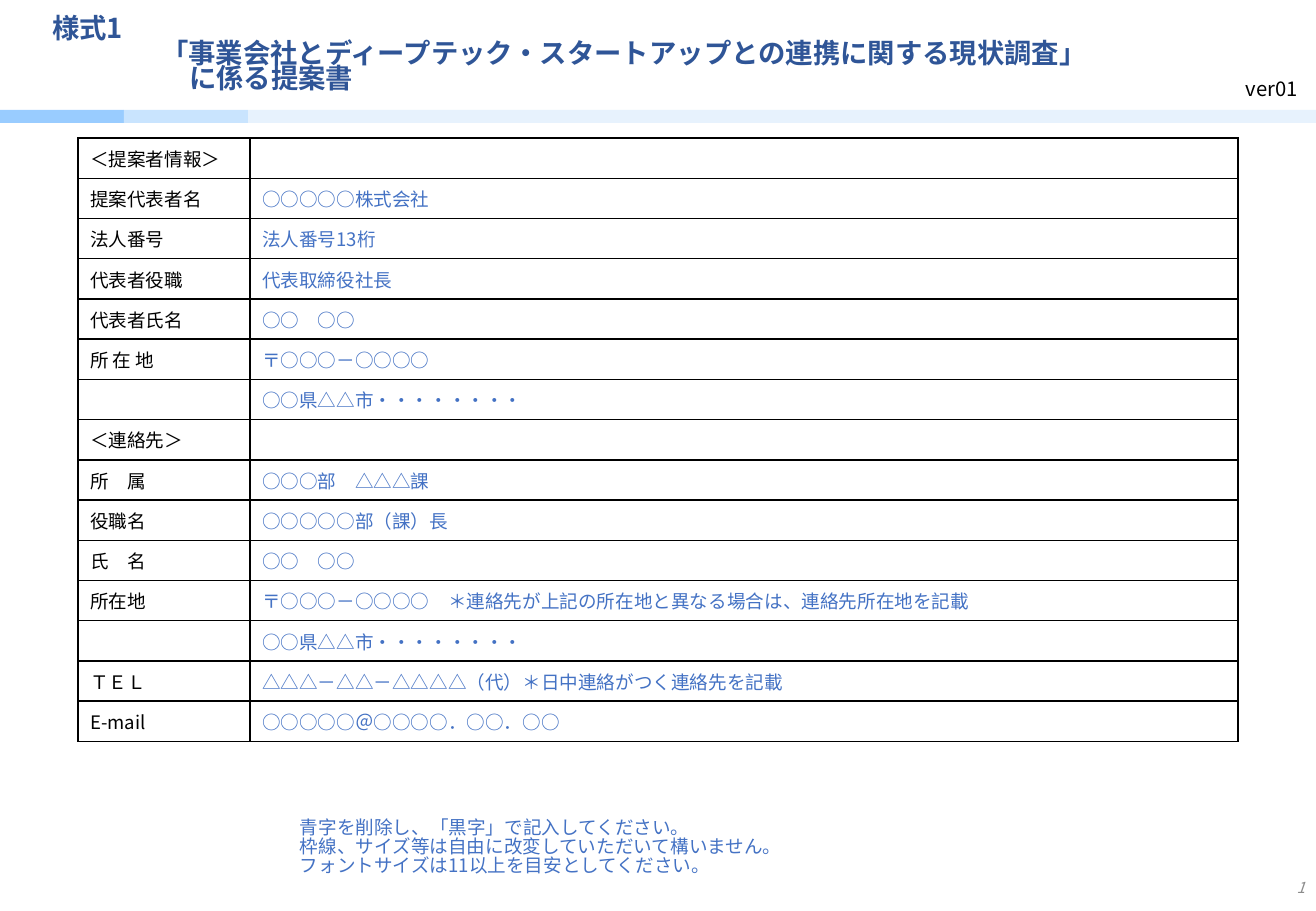
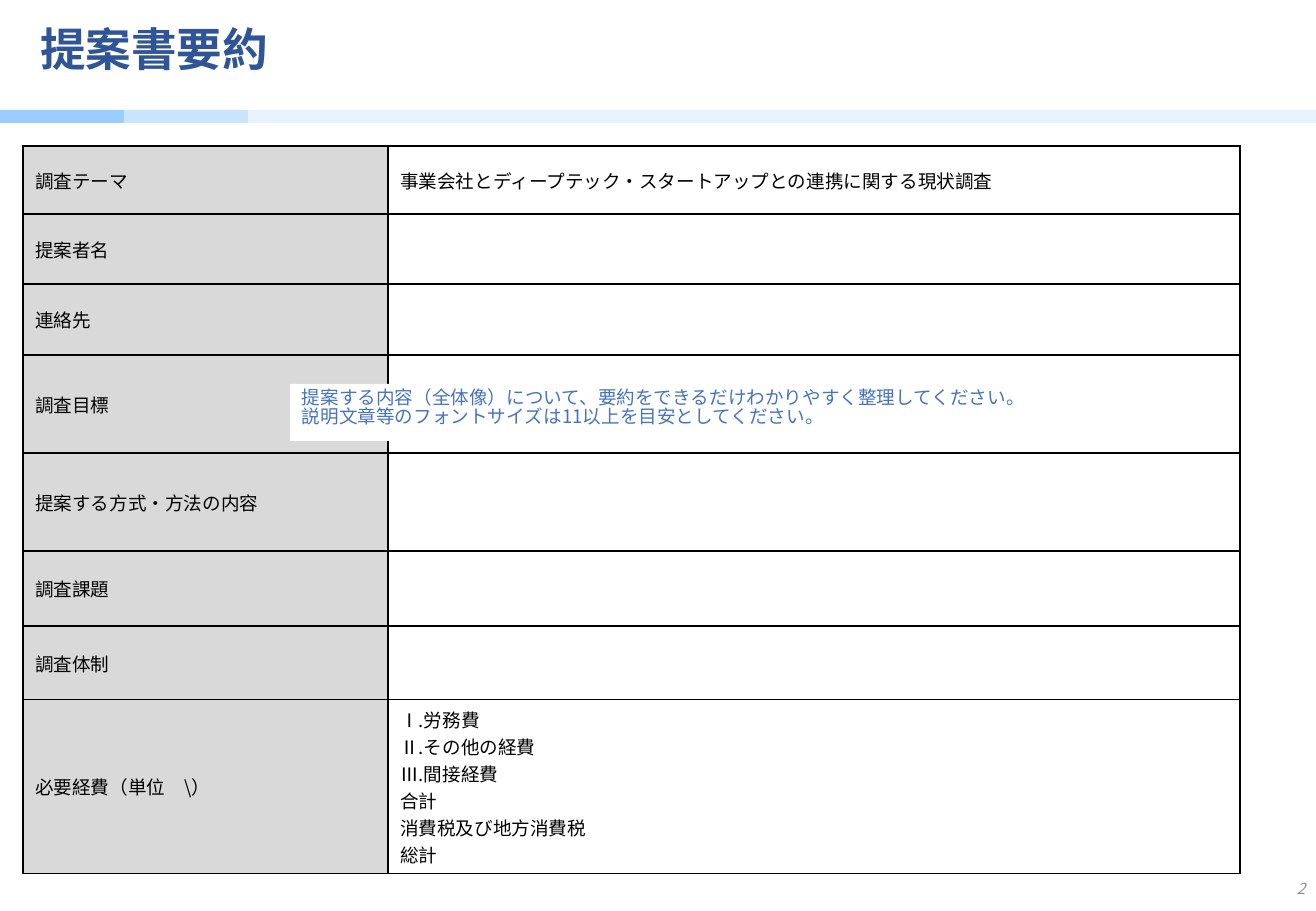
import pptx
import pptx.dml.color
import pptx.enum.shapes
import pptx.enum.text
import pptx.oxml
import pptx.oxml.ns
import pptx.util
from lxml import etree

# Shared look
FONT = "Noto Sans CJK JP"
NAVY, BLUE, BLACK, WHITE = "2F5597", "4472C4", "000000", "FFFFFF"
GRAY, LABEL_FILL = "8C8C8C", "D9D9D9"
SLIDE_W, SLIDE_H = 1316, 911
BAND_TOP, BAND_H = 110, 13
BANDS = [("99CCFF", 124), ("C9E4FE", 124), ("E7F2FD", SLIDE_W - 248)]
NOTE_SPACING, TITLE_SPACING = 0.84, 0.76
EMU_PER_PX = 914400 / 121.5

# Slide 1 content: title lines with their indents, form rows, notes
FORM_TITLE = [
    ("様式1", 0),
    ("「事業会社とディープテック・スタートアップとの連携に関する現状調査」", 109),
    ("に係る提案書", 137),
]
FORM_ROWS = [
    ("＜提案者情報＞", ""),
    ("提案代表者名", "○○○○○株式会社"),
    ("法人番号", "法人番号13桁"),
    ("代表者役職", "代表取締役社長"),
    ("代表者氏名", "○○　○○"),
    ("所 在 地", "〒○○○－○○○○"),
    ("", "○○県△△市・・・・・・・・"),
    ("＜連絡先＞", ""),
    ("所　属", "○○○部　△△△課"),
    ("役職名", "○○○○○部（課）長"),
    ("氏　名", "○○　○○"),
    ("所在地", "〒○○○－○○○○　＊連絡先が上記の所在地と異なる場合は、連絡先所在地を記載"),
    ("", "○○県△△市・・・・・・・・"),
    ("ＴＥＬ", "△△△－△△－△△△△（代）＊日中連絡がつく連絡先を記載"),
    ("E-mail", "○○○○○＠○○○○．○○．○○"),
]
FORM_H = 604
FORM_NOTES = [
    "青字を削除し、「黒字」で記入してください。",
    "枠線、サイズ等は自由に改変していただいて構いません。",
    "フォントサイズは11以上を目安としてください。",
]

# Slide 2 content
SUMMARY_TITLE = [("提案書要約", 0)]
SUMMARY_ROWS = [
    ("調査テーマ", "事業会社とディープテック・スタートアップとの連携に関する現状調査"),
    ("提案者名", ""),
    ("連絡先", ""),
    ("調査目標", ""),
    ("提案する方式・方法の内容", ""),
    ("調査課題", ""),
    ("調査体制", ""),
    (r"必要経費（単位　\）", ["Ⅰ.労務費", "Ⅱ.その他の経費", "Ⅲ.間接経費",
                       "合計", "消費税及び地方消費税", "総計"]),
]
SUMMARY_HEIGHTS = [68, 70, 71, 98, 98, 75, 74, 174]
SUMMARY_NOTES = [
    "提案する内容（全体像）について、要約をできるだけわかりやすく整理してください。",
    "説明文章等のフォントサイズは11以上を目安としてください。",
]


def px(n):
    return pptx.util.Emu(round(n * EMU_PER_PX))


def rgb(hex_color):
    return pptx.dml.color.RGBColor.from_string(hex_color)


def box(*lengths):
    return [px(n) for n in lengths]


def style(font, size, color, bold=False, italic=False):
    font.name, font.size = FONT, pptx.util.Pt(size)
    font.bold, font.italic = bold, italic
    font.color.rgb = rgb(color)
    ea = etree.SubElement(font._element, pptx.oxml.ns.qn("a:ea"))
    ea.set("typeface", FONT)


def write(tf, text, size=11, color=BLACK, bold=False, italic=False,
          align="LEFT", anchor="TOP", spacing=None, wrap=True):
    """Write a string, or a list of lines or (line, indent) pairs."""
    lines = [text] if isinstance(text, str) else text
    tf.word_wrap = wrap
    tf.vertical_anchor = getattr(pptx.enum.text.MSO_ANCHOR, anchor)
    for i, line in enumerate(lines):
        line, indent = (line, 0) if isinstance(line, str) else line
        p = tf.paragraphs[0] if i == 0 else tf.add_paragraph()
        p.alignment = getattr(pptx.enum.text.PP_ALIGN, align)
        if spacing:
            p.line_spacing = spacing
        if indent:
            p._p.get_or_add_pPr().set("marL", str(px(indent)))
        if line:
            r = p.add_run()
            r.text = line
            style(r.font, size, color, bold, italic)
        else:
            p._p.get_or_add_endParaRPr().set("sz", str(size * 100))


def add_rect(slide, bounds, fill):
    sp = slide.shapes.add_shape(pptx.enum.shapes.MSO_SHAPE.RECTANGLE, *box(*bounds))
    sp.shadow.inherit = False
    sp.fill.solid()
    sp.fill.fore_color.rgb = rgb(fill)
    sp.line.fill.background()
    return sp


def add_text(slide, bounds, text, **fmt):
    sp = slide.shapes.add_textbox(*box(*bounds))
    write(sp.text_frame, text, **fmt)
    return sp


def add_bands(slide, layout):
    """Draw the header bands and move them to the layout."""
    left = 0
    for i, (color, width) in enumerate(BANDS):
        el = add_rect(slide, (left, BAND_TOP, width, BAND_H), color)._element
        el.nvSpPr.cNvPr.set("id", str(101 + i))
        layout.shapes._spTree.insert(2 + i, el)
        left += width


def set_title(slide, bounds, lines, size):
    sp = slide.shapes.title
    sp.left, sp.top, sp.width, sp.height = box(*bounds)
    sp.text_frame.auto_size = pptx.enum.text.MSO_AUTO_SIZE.NONE
    write(sp.text_frame, lines, size=size, color=NAVY, bold=True,
          anchor="MIDDLE", spacing=TITLE_SPACING)


def add_page_number(slide, bounds, number):
    sp = add_text(slide, bounds, str(number), size=9, color=GRAY, italic=True,
                  align="RIGHT", anchor="MIDDLE")
    # Turn the run into a slide number field
    r = sp.text_frame.paragraphs[0].runs[0]._r
    field = pptx.oxml.parse_xml(
        f'<a:fld {pptx.oxml.ns.nsdecls("a")} type="slidenum" '
        'id="{B6F15528-21DE-4FAA-801E-634DDDAF4B2B}"/>')
    r.addprevious(field)
    field.extend(list(r))
    r.getparent().remove(r)


def set_borders(cell):
    tc_pr = cell._tc.get_or_add_tcPr()
    for side in "LRTB":
        tc_pr.append(pptx.oxml.parse_xml(
            f'<a:ln{side} {pptx.oxml.ns.nsdecls("a")} w="12700"><a:solidFill>'
            f'<a:srgbClr val="{BLACK}"/></a:solidFill></a:ln{side}>'))


def add_grid(slide, left, top, widths, heights, rows, colors, label_fill=None):
    bounds = box(left, top, sum(widths), sum(heights))
    table = slide.shapes.add_table(len(rows), len(widths), *bounds).table
    table.first_row = table.horz_banding = False
    for column, width in zip(table.columns, widths):
        column.width = px(width)
    for i, (row, height) in enumerate(zip(rows, heights)):
        table.rows[i].height = px(height)
        for j, text in enumerate(row):
            cell = table.cell(i, j)
            set_borders(cell)
            if label_fill and j == 0:
                cell.fill.solid()
                cell.fill.fore_color.rgb = rgb(label_fill)
            else:
                cell.fill.background()
            write(cell.text_frame, text, color=colors[j], wrap=None)
            cell.vertical_anchor = pptx.enum.text.MSO_ANCHOR.MIDDLE


def build_form(slide):
    set_title(slide, (40, 10, 1119, 92), FORM_TITLE, 16.2)
    add_page_number(slide, (1197, 863, 120, 48), 1)
    heights = [FORM_H / len(FORM_ROWS)] * len(FORM_ROWS)
    add_grid(slide, 78, 138, (172, 988), heights, FORM_ROWS, (BLACK, BLUE))
    add_text(slide, (288, 814, 659, 80), FORM_NOTES, color=BLUE, spacing=NOTE_SPACING)
    add_text(slide, (1234, 74, 82, 36), "ver01", size=12, spacing=NOTE_SPACING, wrap=False)


def build_summary(slide):
    set_title(slide, (28, 8, 1213, 92), SUMMARY_TITLE, 27)
    add_page_number(slide, (1199, 865, 118, 46), 2)
    add_grid(slide, 23, 146, (365, 852), SUMMARY_HEIGHTS, SUMMARY_ROWS,
             (BLACK, BLACK), LABEL_FILL)
    sp = add_rect(slide, (290, 384, 863, 57), WHITE)
    write(sp.text_frame, SUMMARY_NOTES, color=BLUE, spacing=NOTE_SPACING)


def main():
    prs = pptx.Presentation()
    prs.slide_width, prs.slide_height = box(SLIDE_W, SLIDE_H)
    layout = prs.slide_layouts[5]  # title only
    form, summary = [prs.slides.add_slide(layout) for _ in range(2)]
    add_bands(form, layout)
    build_form(form)
    build_summary(summary)
    prs.save("out.pptx")


if __name__ == "__main__":
    main()
